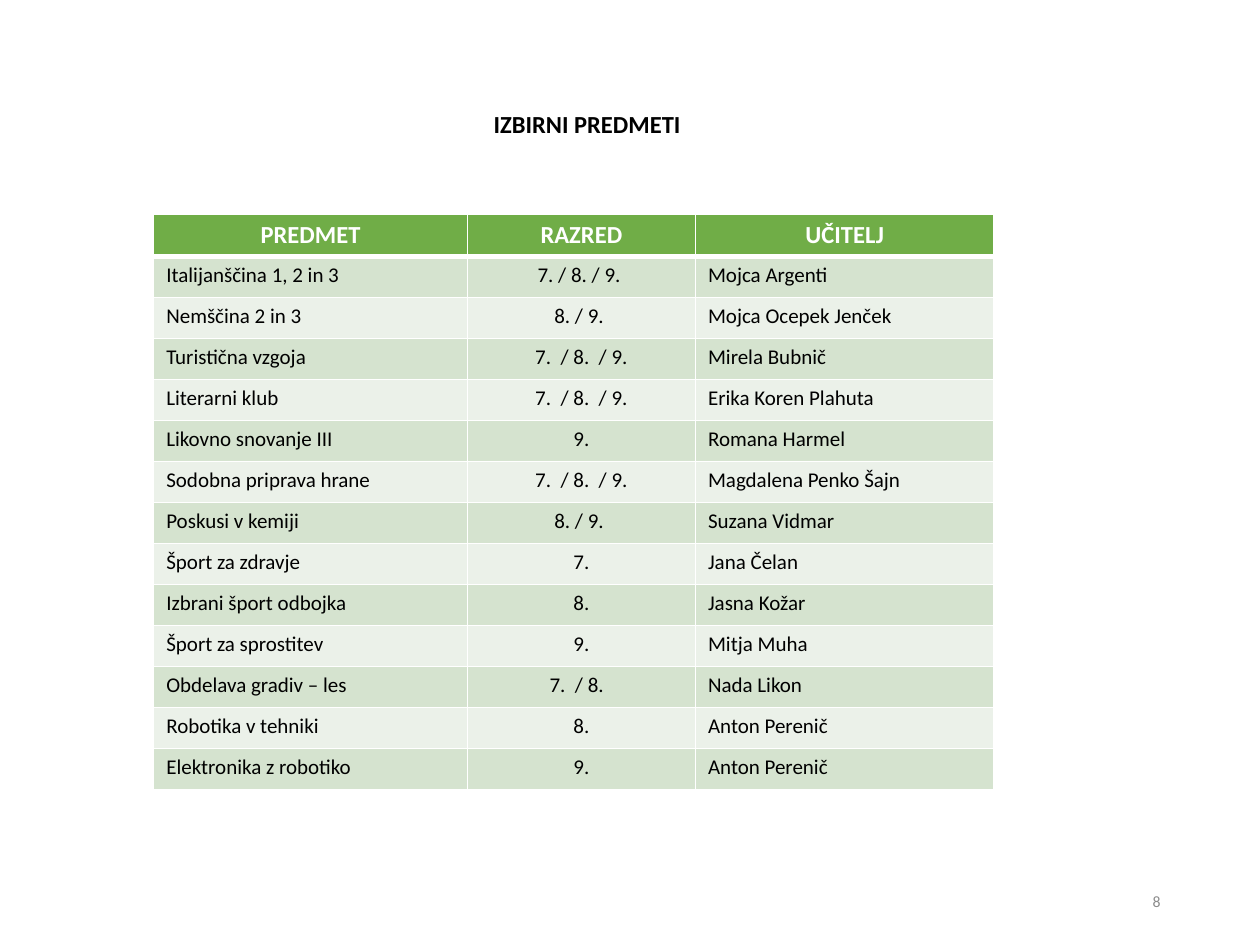
from pptx import Presentation
from pptx.dml.color import RGBColor
from pptx.enum.text import MSO_ANCHOR, PP_ALIGN
from pptx.util import Inches, Pt
from lxml import etree

LEFT, MID, RIGHT = PP_ALIGN.LEFT, PP_ALIGN.CENTER, PP_ALIGN.RIGHT
NS = "http://schemas.openxmlformats.org/drawingml/2006/main"


def style(frame, text, size, color, align, bold=False):
    frame.text = text
    line = frame.paragraphs[0]
    line.alignment = align
    font = line.runs[0].font
    font.name, font.size, font.bold = "Calibri", Pt(size), bold
    font.color.rgb = RGBColor.from_string(color)
    return line


def border(cell, side, width):
    edge = etree.Element(f"{{{NS}}}{side}", w=str(Pt(width)))
    fill = etree.SubElement(edge, f"{{{NS}}}solidFill")
    etree.SubElement(fill, f"{{{NS}}}srgbClr", val="FFFFFF")
    return edge


prs = Presentation()
prs.slide_width, prs.slide_height = Inches(10), Inches(7.5)
slide = prs.slides.add_slide(prs.slide_layouts[6])

notes = [
    ("8", 7.06, 6.95, 2.25, 0.4, 9, "8C8C8C", RIGHT, False, MSO_ANCHOR.MIDDLE),
    ("IZBIRNI PREDMETI", 0.35, 0.84, 8.62, 0.44, 14, "000000", MID, True, MSO_ANCHOR.TOP),
]
for text, x, y, w, h, size, color, align, bold, anchor in notes:
    frame = slide.shapes.add_textbox(Inches(x), Inches(y), Inches(w), Inches(h)).text_frame
    frame.word_wrap = True
    frame.vertical_anchor = anchor
    line = style(frame, text, size, color, align, bold)
line.line_spacing = 0.9

rows = [
    ("PREDMET", "RAZRED", "UČITELJ"),
    ("Italijanščina 1, 2 in 3", "7. / 8. / 9. ", "Mojca Argenti"),
    ("Nemščina 2 in 3", "8. / 9. ", "Mojca Ocepek Jenček"),
    ("Turistična vzgoja", "7.  / 8.  / 9.", "Mirela Bubnič"),
    ("Literarni klub", "7.  / 8.  / 9.", "Erika Koren Plahuta"),
    ("Likovno snovanje III", "9.", "Romana Harmel"),
    ("Sodobna priprava hrane", "7.  / 8.  / 9.", "Magdalena Penko Šajn"),
    ("Poskusi v kemiji", "8. / 9. ", "Suzana Vidmar"),
    ("Šport za zdravje", "7.", "Jana Čelan"),
    ("Izbrani šport odbojka", "8.", "Jasna Kožar"),
    ("Šport za sprostitev", "9.", "Mitja Muha"),
    ("Obdelava gradiv – les", "7.  / 8.  ", "Nada Likon"),
    ("Robotika v tehniki", "8.", "Anton Perenič"),
    ("Elektronika z robotiko", "9.", "Anton Perenič"),
]
widths = [2.49, 1.81, 2.37]
aligns = [LEFT, MID, LEFT]
bands = ["EBF1E9", "D5E3CF"]

table = slide.shapes.add_table(
    len(rows), len(widths), Inches(1.22), Inches(1.7), Inches(sum(widths)), Inches(4.56)
).table
for col, width in zip(table.columns, widths):
    col.width = Inches(width)

for r, row in enumerate(rows):
    head = r == 0
    for c, text in enumerate(row):
        cell = table.cell(r, c)
        if head:
            style(cell.text_frame, text, 14, "FFFFFF", MID, True)
        else:
            style(cell.text_frame, text, 12, "000000", aligns[c])
        cell.fill.solid()
        cell.fill.fore_color.rgb = RGBColor.from_string("70AD47" if head else bands[r % 2])
        props = cell._tc.get_or_add_tcPr()
        for i, side in enumerate(["lnL", "lnR", "lnT", "lnB"]):
            thick = (head and side == "lnB") or (r == 1 and side == "lnT")
            props.insert(i, border(cell, side, 3 if thick else 1))

prs.save("out.pptx")
